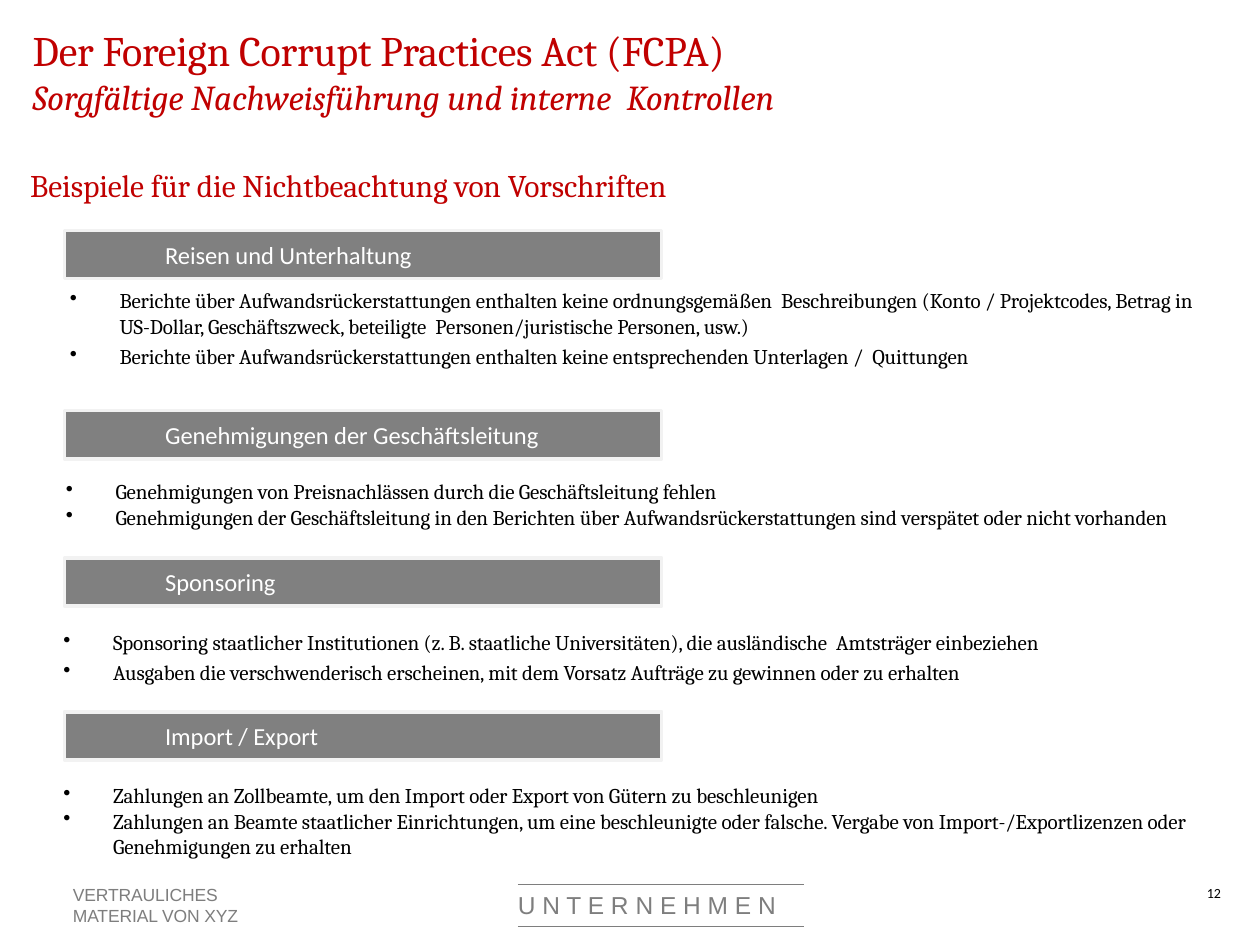
import pptx
import pptx.dml.color
import pptx.enum.shapes
import pptx.enum.text
import pptx.oxml.ns
import pptx.util
from lxml import etree
from pptx.util import Cm

COLORS = {"red": "C00000", "gray": "808080", "footer": "7E7E7E",
          "frame": "F2F2F2", "white": "FFFFFF", "black": "000000"}

# Heading, bar top, list box (left, offset below bar top, width, height),
# line spacing, space between bullets, bullets
SECTIONS = [
    ("Reisen und Unterhaltung", 4.65, (-0.43, 1.01, 24.97, 1.93), 14.8, 2.6, [
        "Berichte über Aufwandsrückerstattungen enthalten keine ordnungsgemäßen  "
        "Beschreibungen (Konto / Projektcodes, Betrag in US-Dollar, Geschäftszweck, "
        "beteiligte  Personen/juristische Personen, usw.)",
        "Berichte über Aufwandsrückerstattungen enthalten keine entsprechenden "
        "Unterlagen /  Quittungen"]),
    ("Genehmigungen der Geschäftsleitung", 8.28, (-0.51, 1.25, 25.6, 1.27), None, 0.4, [
        "Genehmigungen von Preisnachlässen durch die Geschäftsleitung fehlen",
        "Genehmigungen der Geschäftsleitung in den Berichten über "
        "Aufwandsrückerstattungen sind verspätet oder nicht vorhanden"]),
    ("Sponsoring", 11.25, (-0.56, 1.3, 25.73, 1.4), 14.8, 2.6, [
        "Sponsoring staatlicher Institutionen (z. B. staatliche Universitäten), "
        "die ausländische  Amtsträger einbeziehen",
        "Ausgaben die verschwenderisch erscheinen, mit dem Vorsatz Aufträge zu "
        "gewinnen oder zu erhalten"]),
    ("Import / Export", 14.35, (-0.56, 1.3, 25.73, 1.8), None, 0.4, [
        "Zahlungen an Zollbeamte, um den Import oder Export von Gütern zu beschleunigen",
        "Zahlungen an Beamte staatlicher Einrichtungen, um eine beschleunigte oder "
        "falsche. Vergabe von Import-/Exportlizenzen oder Genehmigungen zu erhalten"]),
]


def rgb(name):
    return pptx.dml.color.RGBColor.from_string(COLORS[name])


def add_text(paragraph, text, font="Cambria", size=12, color="black",
             italic=False, spacing=0):
    """Append one formatted run; spacing is in hundredths of a point."""
    run = paragraph.add_run()
    run.text = text
    run.font.name = font
    run.font.size = pptx.util.Pt(size)
    run.font.color.rgb = rgb(color)
    run.font.italic = italic
    if spacing:
        run._r.get_or_add_rPr().set("spc", str(spacing))


def set_insets(frame, inset):
    frame.margin_left = frame.margin_top = Cm(inset)
    frame.margin_right = frame.margin_bottom = Cm(inset)


def add_box(slide, left, top, width, height, inset=None, wrap=True):
    box = slide.shapes.add_textbox(Cm(left), Cm(top), Cm(width), Cm(height))
    frame = box.text_frame
    frame.word_wrap = wrap
    if inset is not None:
        set_insets(frame, inset)
    return frame


def set_indent(paragraph, left, first=0, bullet=None):
    properties = paragraph._p.get_or_add_pPr()
    properties.set("marL", str(Cm(left)))
    properties.set("indent", str(Cm(first)))
    if bullet:
        mark = etree.SubElement(properties, pptx.oxml.ns.qn("a:buChar"))
        mark.set("char", bullet)


def build_title(slide, left, top, width, height):
    title = slide.shapes.title
    title.left, title.top = Cm(left), Cm(top)
    title.width, title.height = Cm(width), Cm(height)
    frame = title.text_frame
    set_insets(frame, 0)
    frame.word_wrap = True
    frame.auto_size = pptx.enum.text.MSO_AUTO_SIZE.NONE
    frame.vertical_anchor = pptx.enum.text.MSO_ANCHOR.TOP
    paragraph = frame.paragraphs[0]
    paragraph.alignment = pptx.enum.text.PP_ALIGN.LEFT
    add_text(paragraph, "Der Foreign Corrupt Practices Act (FCPA)",
             size=24, color="red", spacing=-10)
    paragraph.add_line_break()
    add_text(paragraph, "Sorgfältige Nachweisführung und interne  Kontrollen",
             size=20, color="red", italic=True, spacing=-5)


def build_subtitle(slide, left, top, width, height):
    frame = add_box(slide, left, top, width, height)
    add_text(frame.paragraphs[0], "Beispiele für die Nichtbeachtung von Vorschriften",
             size=18, color="red", spacing=-5)


def build_bar(slide, heading, left, top, width, height):
    bar = slide.shapes.add_shape(pptx.enum.shapes.MSO_SHAPE.RECTANGLE,
                                 Cm(left), Cm(top), Cm(width), Cm(height))
    bar.shadow.inherit = False
    bar.fill.solid()
    bar.fill.fore_color.rgb = rgb("gray")
    bar.line.color.rgb = rgb("frame")
    bar.line.width = pptx.util.Pt(2)
    bar.text_frame.vertical_anchor = pptx.enum.text.MSO_ANCHOR.MIDDLE
    paragraph = bar.text_frame.paragraphs[0]
    paragraph.alignment = pptx.enum.text.PP_ALIGN.LEFT
    set_indent(paragraph, 1.78)
    add_text(paragraph, heading, font="Calibri", size=14, color="white", spacing=-5)


def build_section(slide, left, top, width, height, heading, list_box,
                  line_spacing, gap, bullets):
    build_bar(slide, heading, left, top, width, height)
    list_left, offset, list_width, list_height = list_box
    frame = add_box(slide, list_left, top + offset, list_width, list_height)
    for index, bullet in enumerate(bullets):
        paragraph = frame.add_paragraph() if index else frame.paragraphs[0]
        set_indent(paragraph, 2.59, -1, "•")
        if line_spacing:
            paragraph.line_spacing = pptx.util.Pt(line_spacing)
        if index:
            paragraph.space_before = pptx.util.Pt(gap)
        add_text(paragraph, bullet, spacing=-5)


def build_footer(slide, left, top, width, height):
    # Confidentiality note
    note = add_box(slide, left, top, 3.53, height, inset=0)
    add_text(note.paragraphs[0], "VERTRAULICHES MATERIAL VON XYZ",
             font="Arial", size=10, color="footer", spacing=-5)

    # Company name between two rules
    name_left, name_width = left + 8.97, 5.77
    for rule_top in (top, top + height - 0.05):
        rule = slide.shapes.add_connector(
            pptx.enum.shapes.MSO_CONNECTOR.STRAIGHT,
            Cm(name_left), Cm(rule_top), Cm(name_left + name_width), Cm(rule_top))
        rule.line.color.rgb = rgb("footer")
        rule.line.width = pptx.util.Pt(0.5)
        etree.SubElement(rule._element.spPr, pptx.oxml.ns.qn("a:effectLst"))
    name = add_box(slide, name_left, top + 0.13, name_width, 0.64, inset=0)
    name.paragraphs[0].line_spacing = pptx.util.Pt(16.5)
    add_text(name.paragraphs[0], "U N T E R N E H M E N",
             font="Arial", size=14, color="footer")

    # Page number
    number = add_box(slide, left + width - 0.79, top - 0.13, 0.79, 0.6, wrap=False)
    add_text(number.paragraphs[0], "12", font="Calibri", size=8)


def main():
    presentation = pptx.Presentation()
    presentation.slide_width, presentation.slide_height = Cm(25.4), Cm(19.05)
    slide = presentation.slides.add_slide(presentation.slide_layouts[5])
    build_title(slide, 0.66, 0.5, 20.17, 1.9)
    build_subtitle(slide, 0.36, 3.23, 20.5, 1.02)
    for heading, top, list_box, line_spacing, gap, bullets in SECTIONS:
        build_section(slide, 1.3, top, 12.04, 0.97, heading, list_box,
                      line_spacing, gap, bullets)
    build_footer(slide, 1.47, 17.83, 23.4, 0.89)
    presentation.save("out.pptx")


if __name__ == "__main__":
    main()
